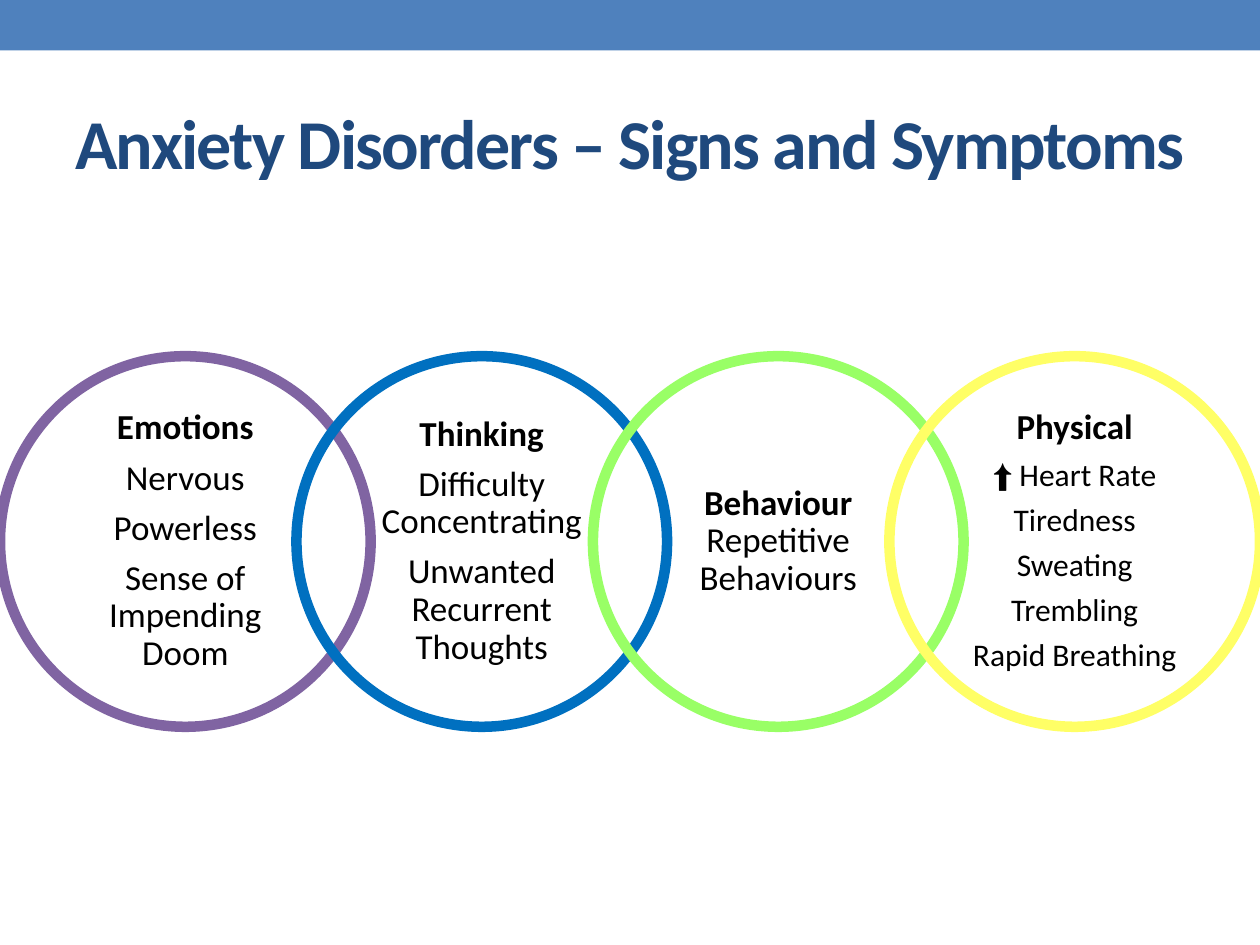
"""Build a slide of four linked rings listing signs and symptoms of anxiety disorders."""
from dataclasses import dataclass

from pptx import Presentation
from pptx.dml.color import RGBColor
from pptx.enum.shapes import MSO_SHAPE
from pptx.enum.text import MSO_ANCHOR, PP_ALIGN
from pptx.util import Inches, Pt

OVAL, RECTANGLE = MSO_SHAPE.OVAL, MSO_SHAPE.RECTANGLE
MIDDLE, CENTER = MSO_ANCHOR.MIDDLE, PP_ALIGN.CENTER
WIDTH, HEIGHT = Inches(10), Inches(7.5)
RING_STEP = 0.8


@dataclass(frozen=True)
class Theme:
    font: str = "Calibri"
    band: str = "4F81BD"
    title: str = "1F497D"
    ink: str = "000000"
    paper: str = "FFFFFF"
    title_size: int = 40
    body_size: int = 20
    small_size: int = 18
    ring_line: int = 6


@dataclass(frozen=True)
class Line:
    text: str
    size: int
    bold: bool = False


@dataclass(frozen=True)
class Ring:
    heading: str
    symptoms: tuple[str, ...]
    color: str
    size: int
    one_paragraph: bool = False
    fill: str | None = None

    def paragraphs(self) -> list[list[Line]]:
        heading = Line(self.heading, THEME.body_size, True)
        lines = [heading, *(Line(symptom, self.size) for symptom in self.symptoms)]
        return [lines] if self.one_paragraph else [[line] for line in lines]


THEME = Theme()
RINGS = (
    Ring("Emotions", ("Nervous", "Powerless", "Sense of Impending Doom"),
         "8064A2", THEME.body_size, fill=THEME.paper),
    Ring("Thinking", ("Difficulty Concentrating", "Unwanted Recurrent Thoughts"),
         "0070C0", THEME.body_size),
    Ring("Behaviour", ("Repetitive Behaviours",),
         "99FF66", THEME.body_size, one_paragraph=True),
    Ring("Physical", ("⬆ Heart Rate", "Tiredness", "Sweating", "Trembling", "Rapid Breathing"),
         "FFFF66", THEME.small_size),
)


def write(frame, paragraphs: list[list[Line]], *, color: str, inset=(0.1, 0.05),
          line_spacing: float = 1.0, space_share: float = 0.0, tracking: float = 0.0) -> None:
    """Fill a text frame with centred paragraphs, breaking between their lines."""
    frame.word_wrap = True
    frame.vertical_anchor = MIDDLE
    frame.margin_left = frame.margin_right = Inches(inset[0])
    frame.margin_top = frame.margin_bottom = Inches(inset[1])
    for index, lines in enumerate(paragraphs):
        paragraph = frame.add_paragraph() if index else frame.paragraphs[0]
        paragraph.alignment = CENTER
        paragraph.line_spacing = line_spacing
        paragraph.space_after = Pt(lines[0].size * space_share)
        for position, line in enumerate(lines):
            if position:
                paragraph.add_line_break()
            run = paragraph.add_run()
            run.text = line.text
            run.font.name = THEME.font
            run.font.size = Pt(line.size)
            run.font.bold = line.bold
            run.font.color.rgb = RGBColor.from_string(color)
            if tracking:
                run._r.get_or_add_rPr().set("spc", str(round(tracking * 100)))


def draw_band(slide) -> None:
    """Draw the coloured band along the top edge."""
    band = slide.shapes.add_shape(RECTANGLE, 0, 0, WIDTH, Inches(0.4))
    band.shadow.inherit = False
    band.fill.solid()
    band.fill.fore_color.rgb = RGBColor.from_string(THEME.band)
    band.line.fill.background()


def draw_title(slide, text: str) -> None:
    """Write the slide title in a box centred across the slide."""
    side = round(WIDTH * 0.035)
    title = slide.shapes.add_textbox(side, Inches(0.58), WIDTH - 2 * side, Inches(1.08))
    write(title.text_frame, [[Line(text, THEME.title_size, True)]],
          color=THEME.title, tracking=-1)


def draw_ring(slide, ring: Ring, column: int) -> None:
    """Draw one ring of a chain that spans the full slide width."""
    diameter = round(WIDTH / (1 + RING_STEP * (len(RINGS) - 1)))
    left = round(column * RING_STEP * diameter)
    top = round(HEIGHT * 0.573 - diameter / 2)
    circle = slide.shapes.add_shape(OVAL, left, top, diameter, diameter)
    circle.shadow.inherit = False
    if ring.fill:
        circle.fill.solid()
        circle.fill.fore_color.rgb = RGBColor.from_string(ring.fill)
    else:
        circle.fill.background()
    circle.line.color.rgb = RGBColor.from_string(ring.color)
    circle.line.width = Pt(THEME.ring_line)
    write(circle.text_frame, ring.paragraphs(), color=THEME.ink,
          inset=(0.16, 0.03), line_spacing=0.9, space_share=0.35)


def main() -> None:
    """Assemble and save the slide."""
    presentation = Presentation()
    presentation.slide_width, presentation.slide_height = WIDTH, HEIGHT
    slide = presentation.slides.add_slide(presentation.slide_layouts[6])
    draw_band(slide)
    draw_title(slide, "Anxiety Disorders – Signs and Symptoms")
    for column, ring in enumerate(RINGS):
        draw_ring(slide, ring, column)
    presentation.save("out.pptx")


if __name__ == "__main__":
    main()
